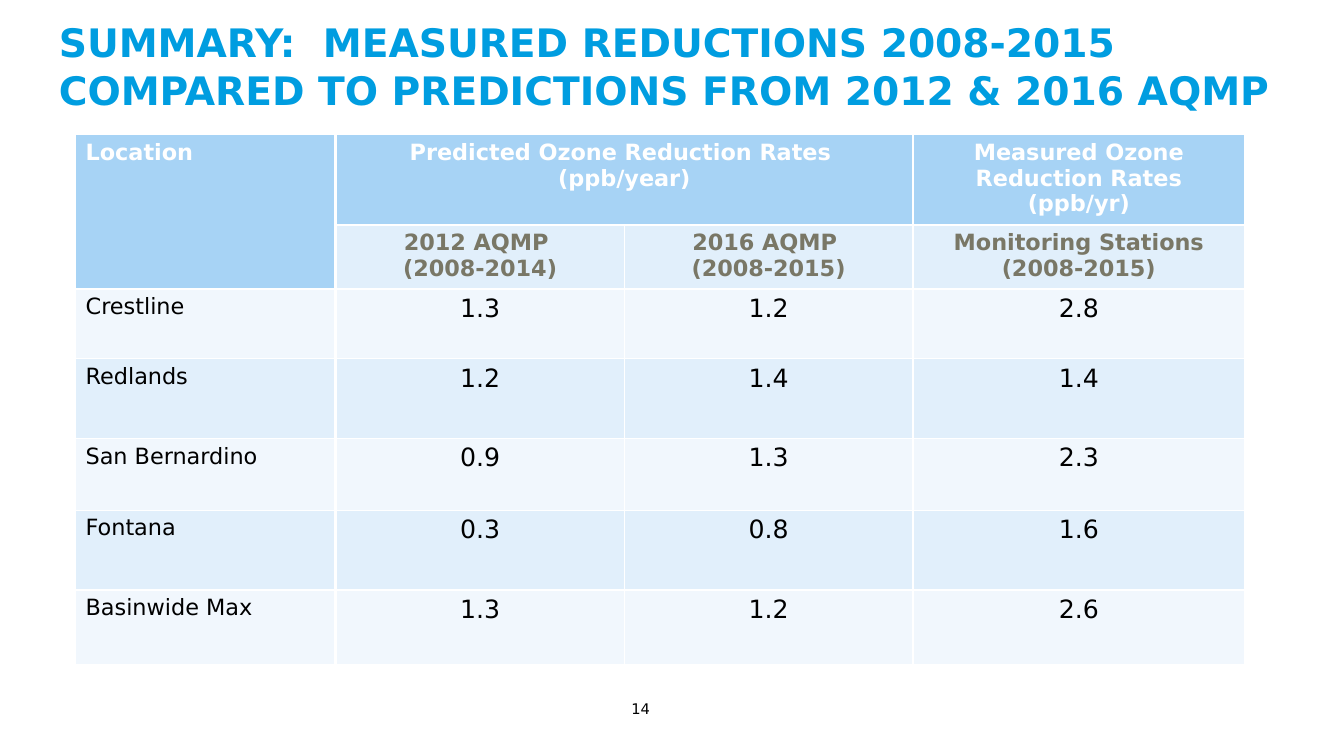
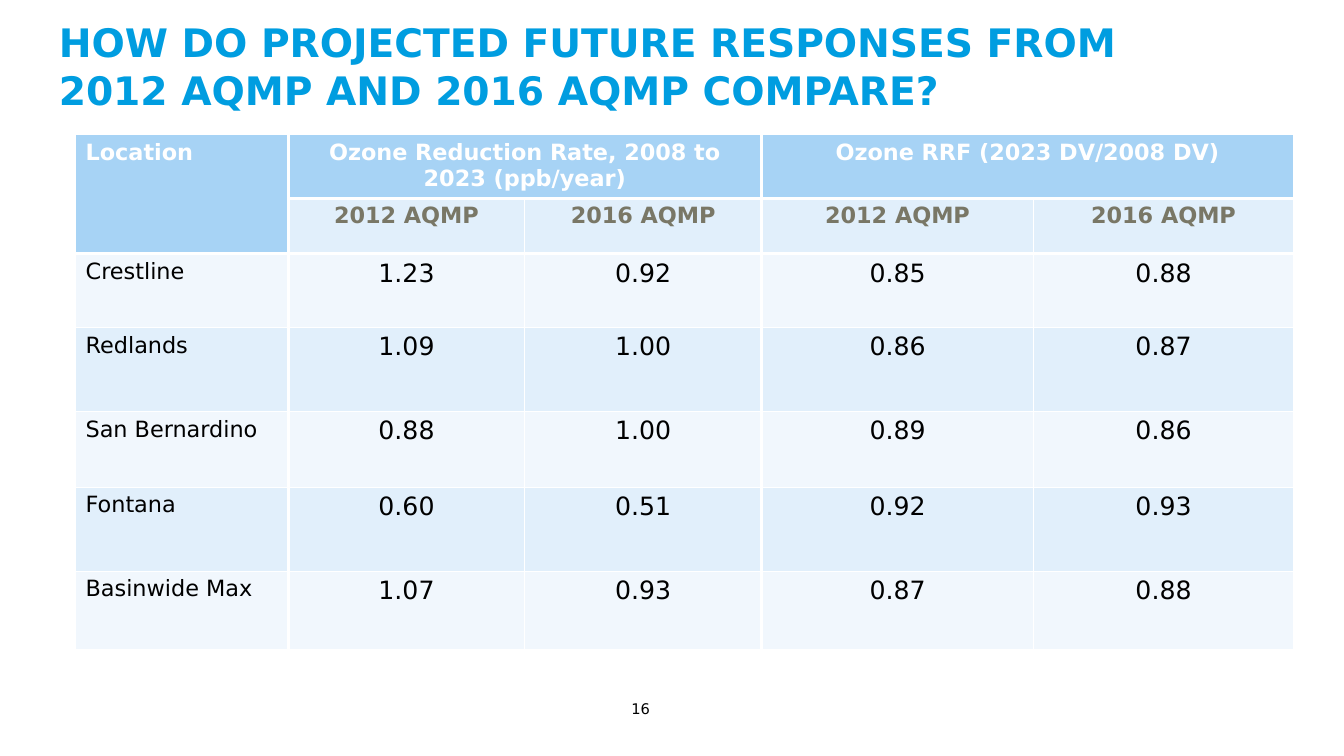
import pptx
import pptx.dml.color
import pptx.enum.text
import pptx.util
from lxml import etree
from pptx.oxml.ns import qn

RGBColor = pptx.dml.color.RGBColor
PP_ALIGN = pptx.enum.text.PP_ALIGN

TITLE_BLUE = RGBColor(0x00, 0x9D, 0xE0)
HEADER_BLUE = RGBColor(0xA7, 0xD3, 0xF5)
BAND_DARK = RGBColor(0xE1, 0xEF, 0xFB)
BAND_LIGHT = RGBColor(0xF1, 0xF7, 0xFD)
SUBHEAD_GREY = RGBColor(0x79, 0x77, 0x66)
WHITE = RGBColor(0xFF, 0xFF, 0xFF)
BLACK = RGBColor(0x00, 0x00, 0x00)

FONT = "DejaVu Sans"
GRID_COLS, GRID_ROWS = 160, 90
THIN, THICK = 1, 2.25
LOCATIONS = ["Crestline", "Redlands", "San Bernardino", "Fontana", "Basinwide Max"]


def grid(n):
    """Length of n grid cells, twelve to the inch."""
    return pptx.util.Inches(n / 12)


def style(p, size, color, bold=False, align=PP_ALIGN.LEFT):
    p.alignment = align
    p.font.name = FONT
    p.font.size = pptx.util.Pt(size)
    p.font.bold = bold
    p.font.color.rgb = color


def add_text(slide, box, text, size, color, bold=False, wrap=True, margins=None):
    tf = slide.shapes.add_textbox(*map(grid, box)).text_frame
    tf.word_wrap = wrap
    if margins:
        tf.margin_left, tf.margin_top, tf.margin_right, tf.margin_bottom = map(
            pptx.util.Inches, margins)
    p = tf.paragraphs[0]
    p.text = text
    style(p, size, color, bold)


def add_frame(slide, title, title_width, number):
    """Title at the top and page number at the foot."""
    add_text(slide, (7, 2, title_width, 13), title, 28, TITLE_BLUE, bold=True,
             margins=(0, 0.02, 0, 0))
    add_text(slide, (74, 82.7, 5.5, 3.3), str(number), 10.5, BLACK, wrap=False)


def set_borders(cell, widths):
    tcPr = cell._tc.get_or_add_tcPr()
    for side, width in zip("LRTB", widths):
        ln = etree.SubElement(tcPr, qn(f"a:ln{side}"), w=str(int(pptx.util.Pt(width))))
        fill = etree.SubElement(ln, qn("a:solidFill"))
        etree.SubElement(fill, qn("a:srgbClr"), val=str(WHITE))


def fill_cell(cell, text, color, size, font_color, bold, align):
    cell.fill.solid()
    cell.fill.fore_color.rgb = color
    p = cell.text_frame.paragraphs[0]
    p.text = text
    style(p, size, font_color, bold, align)


def add_rate_table(slide, box, col_shares, row_shares, groups, subheads, values):
    """Two header rows (groups over subheads), then one banded row per location."""
    left, top, width, height = box
    n_rows, n_cols = len(row_shares), len(col_shares)
    table = slide.shapes.add_table(n_rows, n_cols, *map(grid, box)).table
    table.first_row = table.horz_banding = False
    for col, share in zip(table.columns, col_shares):
        col.width = grid(width * share / sum(col_shares))
    for row, share in zip(table.rows, row_shares):
        row.height = grid(height * share / sum(row_shares))

    # Thick rules part the column groups and close the header rows
    starts = [1 + sum(span for _, span in groups[:i]) for i in range(len(groups))]
    v_rules = [THICK if c in starts else THIN for c in range(n_cols + 1)]
    h_rules = [THICK if r in (1, 2) else THIN for r in range(n_rows + 1)]
    for r in range(n_rows):
        for c in range(n_cols):
            set_borders(table.cell(r, c), v_rules[c:c + 2] + h_rules[r:r + 2])

    # Header rows
    table.cell(0, 0).merge(table.cell(1, 0))
    set_header = (HEADER_BLUE, 16, WHITE, True)
    fill_cell(table.cell(0, 0), "Location", *set_header, PP_ALIGN.LEFT)
    for start, (text, span) in zip(starts, groups):
        if span > 1:
            table.cell(0, start).merge(table.cell(0, start + span - 1))
        fill_cell(table.cell(0, start), text, *set_header, PP_ALIGN.CENTER)
    for c, text in enumerate(subheads, 1):
        fill_cell(table.cell(1, c), text, BAND_DARK, 16, SUBHEAD_GREY, True,
                  PP_ALIGN.CENTER)

    # Location rows
    for r, (name, rates) in enumerate(zip(LOCATIONS, values), 2):
        band = BAND_DARK if r % 2 else BAND_LIGHT
        fill_cell(table.cell(r, 0), name, band, 16, BLACK, False, PP_ALIGN.LEFT)
        for c, rate in enumerate(rates.split(), 1):
            fill_cell(table.cell(r, c), rate, band, 18, BLACK, False, PP_ALIGN.CENTER)


def main():
    prs = pptx.Presentation()
    prs.slide_width, prs.slide_height = grid(GRID_COLS), grid(GRID_ROWS)
    blank = prs.slide_layouts[6]

    # Measured against predicted reductions
    s = prs.slides.add_slide(blank)
    add_frame(s, "SUMMARY:  MEASURED REDUCTIONS 2008-2015 COMPARED TO "
                 "PREDICTIONS FROM 2012 & 2016 AQMP", 153, 14)
    add_rate_table(
        s, (9, 16, 139.2, 62.2),
        [2.58, 2.86, 2.86, 3.29],
        [0.85, 0.6, 0.69, 0.79, 0.71, 0.79, 0.74],
        [("Predicted Ozone Reduction Rates  (ppb/year)", 2),
         ("Measured Ozone Reduction Rates (ppb/yr)", 1)],
        ["2012 AQMP \v(2008-2014)", "2016 AQMP \v(2008-2015)",
         "Monitoring Stations (2008-2015)"],
        ["1.3 1.2 2.8", "1.2 1.4 1.4", "0.9 1.3 2.3", "0.3 0.8 1.6", "1.3 1.2 2.6"])

    # Projected future responses
    s = prs.slides.add_slide(blank)
    add_frame(s, "HOW DO PROJECTED FUTURE RESPONSES FROM 2012 AQMP AND "
                 "2016 AQMP COMPARE?", 138.6, 16)
    add_rate_table(
        s, (9, 16, 145, 60.4),
        [2.11, 2.35, 2.35, 2.7, 2.58],
        [0.55, 0.55, 0.73, 0.83, 0.75, 0.83, 0.78],
        [("Ozone Reduction Rate, 2008 to 2023 (ppb/year)", 2),
         ("Ozone RRF (2023 DV/2008 DV)", 2)],
        ["2012 AQMP", "2016 AQMP"] * 2,
        ["1.23 0.92 0.85 0.88", "1.09 1.00 0.86 0.87", "0.88 1.00 0.89 0.86",
         "0.60 0.51 0.92 0.93", "1.07 0.93 0.87 0.88"])

    prs.save("out.pptx")


if __name__ == "__main__":
    main()
